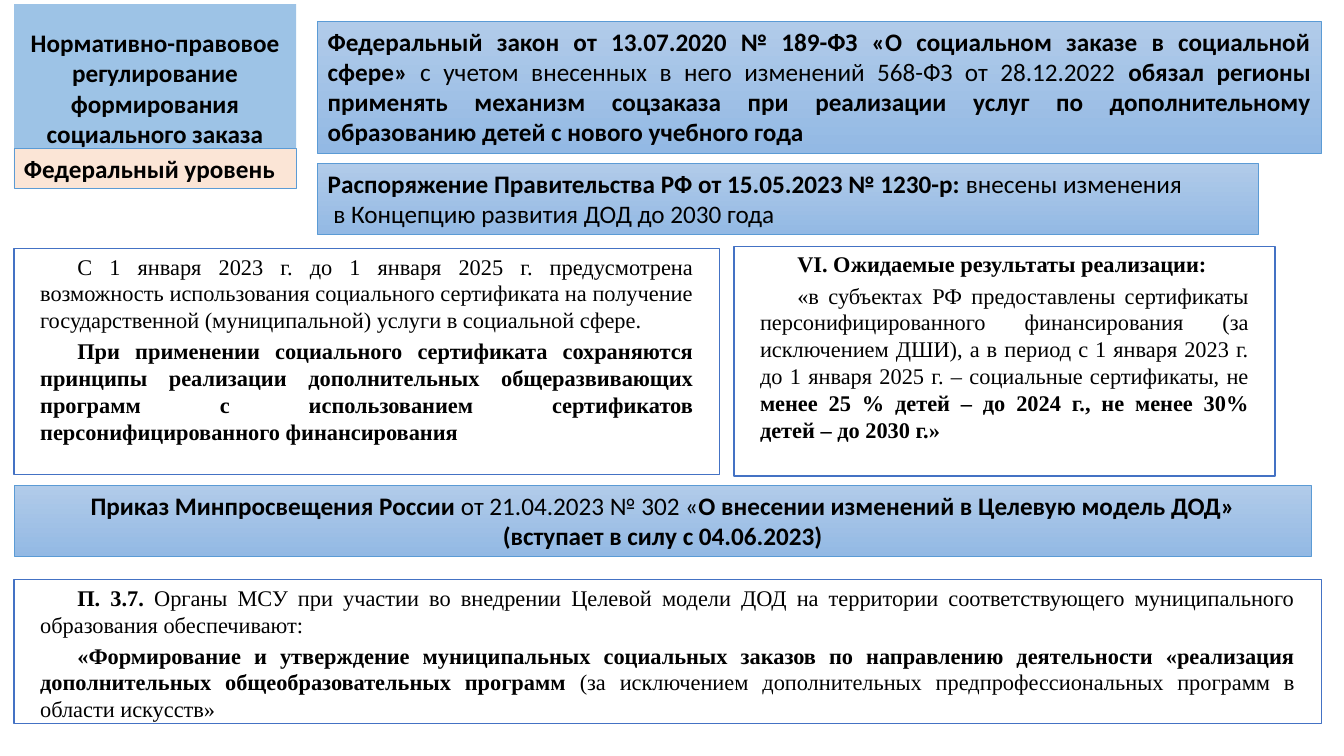
from dataclasses import dataclass
from typing import Optional

from pptx import Presentation
from pptx.dml.color import RGBColor
from pptx.enum.text import MSO_ANCHOR as Anchor, MSO_AUTO_SIZE as AutoSize, PP_ALIGN as Align
from pptx.util import Pt

COLORS = {
    "text": "000000",
    "title": "9DC3E6",
    "level": "FBE5D6",
    "act_top": "B1CBE9",
    "act_bottom": "93B9E4",
    "act_line": "5B9BD5",
    "quote": "FFFFFF",
    "quote_line": "4472C4",
}


@dataclass(frozen=True)
class Style:
    fills: tuple[str, ...]  # two names make a vertical gradient
    line: Optional[str]
    font: str
    size: float
    line_width: float = 0.5
    align: Align = Align.JUSTIFY
    anchor: Anchor = Anchor.TOP
    insets: tuple[float, float, float, float] = (7.2, 3.6, 7.2, 3.6)
    side_margin: float = 0
    first_indent: float = 0
    space_before: float = 0


@dataclass(frozen=True)
class Span:
    text: str
    bold: bool = False


@dataclass(frozen=True)
class Para:
    spans: tuple[Span, ...]
    indent: float = 0


@dataclass(frozen=True)
class Block:
    style: Style
    box: tuple[float, float, float, float]
    paras: tuple[Para, ...]


def strong(text: str) -> Span:
    return Span(text, True)


def para(*spans: Span, indent: float = 0) -> Para:
    return Para(spans, indent)


TITLE = Style(("title",), None, "Calibri", 18, align=Align.CENTER,
              anchor=Anchor.BOTTOM, insets=(0, 5, 0, 0), space_before=5.3)
LEVEL = Style(("level",), "act_line", "Calibri", 18)
ACT = Style(("act_top", "act_bottom"), "act_line", "Calibri", 18)
ORDER = Style(ACT.fills, ACT.line, ACT.font, ACT.size, align=Align.CENTER)
QUOTE = Style(("quote",), "quote_line", "Times New Roman", 16, line_width=1,
              insets=(0, 3, 0, 0), side_margin=18.7, first_indent=26.6, space_before=3)

LEFT, ACT_LEFT = 10, 227

HEADING = Block(TITLE, (LEFT, 3, 201.5, 103), (
    para(strong("Нормативно-правовое регулирование формирования социального заказа")),
))
BLOCKS = (
    Block(LEVEL, (LEFT, 106, 201.5, 28.5), (para(strong("Федеральный уровень")),)),
    Block(ACT, (ACT_LEFT, 15, 716.6, 94.4), (
        para(strong("Федеральный закон от 13.07.2020 № 189-ФЗ «О социальном заказе в социальной сфере»"),
             Span(" с учетом внесенных в него изменений 568-ФЗ от 28.12.2022 "),
             strong("обязал регионы применять механизм соцзаказа при реализации услуг "
                    "по дополнительному образованию детей с нового учебного года")),
    )),
    Block(ACT, (ACT_LEFT, 116.6, 671.6, 50.9), (
        para(strong("Распоряжение Правительства РФ от 15.05.2023 № 1230-р: "),
             Span("внесены изменения")),
        para(Span("в Концепцию развития ДОД до 2030 года"), indent=4),
    )),
    Block(QUOTE, (LEFT, 177.5, 504, 161.3), (
        para(Span("С 1 января 2023 г. до 1 января 2025 г. предусмотрена возможность использования "
                  "социального сертификата на получение государственной (муниципальной) услуги "
                  "в социальной сфере.")),
        para(strong("При применении социального сертификата сохраняются принципы реализации "
                    "дополнительных общеразвивающих программ с использованием сертификатов "
                    "персонифицированного финансирования")),
    )),
    Block(QUOTE, (524.2, 176, 386.6, 164), (
        para(strong("VI. Ожидаемые результаты реализации:")),
        para(Span("«в субъектах РФ предоставлены сертификаты персонифицированного финансирования "
                  "(за исключением ДШИ), а в период с 1 января 2023 г. до 1 января 2025 г. – "
                  "социальные сертификаты, не "),
             strong("менее 25 % детей – до 2024 г., не менее 30% детей – до 2030 г.»")),
    )),
    Block(ORDER, (LEFT, 346.6, 926.8, 50.9), (
        para(strong("Приказ Минпросвещения России "), Span("от 21.04.2023 № 302 «"),
             strong("О внесении изменений в Целевую модель ДОД»")),
        para(strong("(вступает в силу с 04.06.2023)")),
    )),
    Block(QUOTE, (LEFT, 414, 933.8, 103), (
        para(strong("П. 3.7. "),
             Span("Органы МСУ при участии во внедрении Целевой модели ДОД на территории "
                  "соответствующего муниципального образования обеспечивают:")),
        para(strong("«Формирование и утверждение муниципальных социальных заказов по направлению "
                    "деятельности «реализация дополнительных общеобразовательных программ "),
             Span("(за исключением дополнительных предпрофессиональных программ в области искусств»")),
    )),
)


def rgb(name: str) -> RGBColor:
    return RGBColor.from_string(COLORS[name])


def paint(shape, style: Style) -> None:
    fill = shape.fill
    if len(style.fills) == 1:
        fill.solid()
        fill.fore_color.rgb = rgb(style.fills[0])
    else:
        fill.gradient()
        fill.gradient_angle = 270
        for stop, name in zip(fill.gradient_stops, style.fills):
            stop.color.rgb = rgb(name)
    if style.line:
        shape.line.color.rgb = rgb(style.line)
        shape.line.width = Pt(style.line_width)


def write_para(paragraph, content: Para, style: Style) -> None:
    paragraph.alignment = style.align
    paragraph.space_before = Pt(style.space_before)
    font = paragraph.font
    font.name, font.size = style.font, Pt(style.size)
    font.color.rgb = rgb("text")
    props = paragraph._p.get_or_add_pPr()
    props.set("marL", str(Pt(style.side_margin + content.indent)))
    props.set("marR", str(Pt(style.side_margin)))
    props.set("indent", str(Pt(style.first_indent)))
    same_weight = len({span.bold for span in content.spans}) == 1
    if same_weight:
        font.bold = content.spans[0].bold
    for span in content.spans:
        run = paragraph.add_run()
        run.text = span.text
        if not same_weight:
            run.font.bold = span.bold


def fill_block(shape, block: Block) -> None:
    """Place, paint and write one block into a text box or placeholder."""
    style = block.style
    shape.left, shape.top, shape.width, shape.height = map(Pt, block.box)
    paint(shape, style)
    frame = shape.text_frame
    frame.word_wrap = True
    frame.auto_size = AutoSize.NONE
    frame.vertical_anchor = style.anchor
    (frame.margin_left, frame.margin_top,
     frame.margin_right, frame.margin_bottom) = map(Pt, style.insets)
    for index, content in enumerate(block.paras):
        paragraph = frame.add_paragraph() if index else frame.paragraphs[0]
        write_para(paragraph, content, style)


def main() -> None:
    deck = Presentation()
    deck.slide_width, deck.slide_height = Pt(960), Pt(540)
    slide = deck.slides.add_slide(deck.slide_layouts[5])
    fill_block(slide.shapes.title, HEADING)
    for block in BLOCKS:
        fill_block(slide.shapes.add_textbox(*map(Pt, block.box)), block)
    deck.save("out.pptx")


if __name__ == "__main__":
    main()
